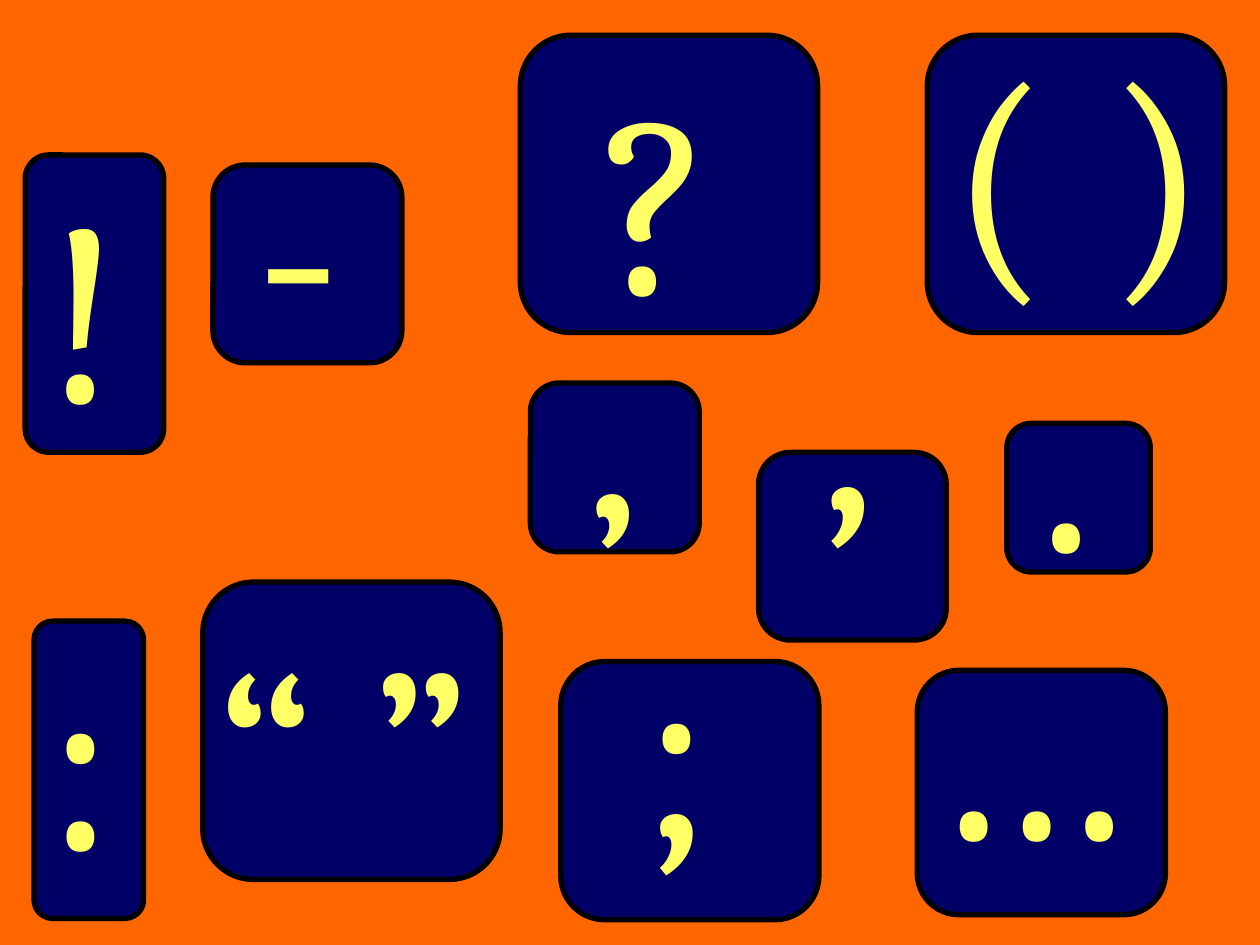
from pptx import Presentation
from pptx.dml.color import RGBColor
from pptx.enum import shapes, text
from pptx.util import Inches, Pt

ORANGE = RGBColor(0xFF, 0x66, 0x00)
NAVY = RGBColor(0x00, 0x00, 0x66)
BLACK = RGBColor(0x00, 0x00, 0x00)
YELLOW = RGBColor(0xFF, 0xFF, 0x66)
MARK_HEIGHT = 2.6

# mark, tile (left, top, width, height), mark box (left, top, width)
MARKS = [
    ("!", (0.2, 1.23, 1.1, 2.36), (0.28, 1.07, 1.49)),
    (".", (7.99, 3.36, 1.14, 1.18), (8.15, 2.25, 1.49)),
    ("’", (4.21, 3.04, 1.34, 1.34), (4.53, 3.2, 1.49)),
    (",", (6.02, 3.59, 1.49, 1.49), (6.42, 1.94, 1.49)),
    ("“ ”", (1.61, 4.62, 2.36, 2.36), (1.62, 4.62, 2.6)),
    ("…", (7.28, 5.32, 1.97, 1.94), (7.28, 4.54, 1.81)),
    ("( )", (7.36, 0.28, 2.36, 2.36), (7.44, 0, 2.56)),
    (":", (0.27, 4.93, 0.87, 2.36), (0.27, 4.62, 1.49)),
    (";", (4.45, 5.25, 2.05, 2.05), (5, 4.54, 1.49)),
    ("-", (1.69, 1.31, 1.5, 1.57), (1.93, 0.6, 1.49)),
    ("?", (4.13, 0.28, 2.36, 2.36), (4.68, 0.21, 1.49)),
]


def add_tile(group, place):
    tile = group.shapes.add_shape(
        shapes.MSO_SHAPE.ROUNDED_RECTANGLE, *map(Inches, place))
    tile.adjustments[0] = 0.17
    tile.shadow.inherit = False
    tile.fill.solid()
    tile.fill.fore_color.rgb = NAVY
    tile.line.color.rgb = BLACK
    tile.line.width = Pt(3)


def add_mark(group, mark, place):
    frame = group.shapes.add_textbox(
        *map(Inches, (*place, MARK_HEIGHT))).text_frame
    frame.word_wrap = True
    frame.auto_size = text.MSO_AUTO_SIZE.SHAPE_TO_FIT_TEXT
    frame.text = mark
    font = frame.paragraphs[0].runs[0].font
    font.name = "Cambria"
    font.size = Pt(150)
    font.color.rgb = YELLOW


prs = Presentation()
prs.slide_width, prs.slide_height = Inches(10), Inches(7.5)
slide = prs.slides.add_slide(prs.slide_layouts[6])
slide.background.fill.solid()
slide.background.fill.fore_color.rgb = ORANGE

# One group per punctuation mark: tile behind, mark in front
for mark, tile_place, mark_place in MARKS:
    group = slide.shapes.add_group_shape()
    add_tile(group, tile_place)
    add_mark(group, mark, mark_place)

prs.save("out.pptx")
